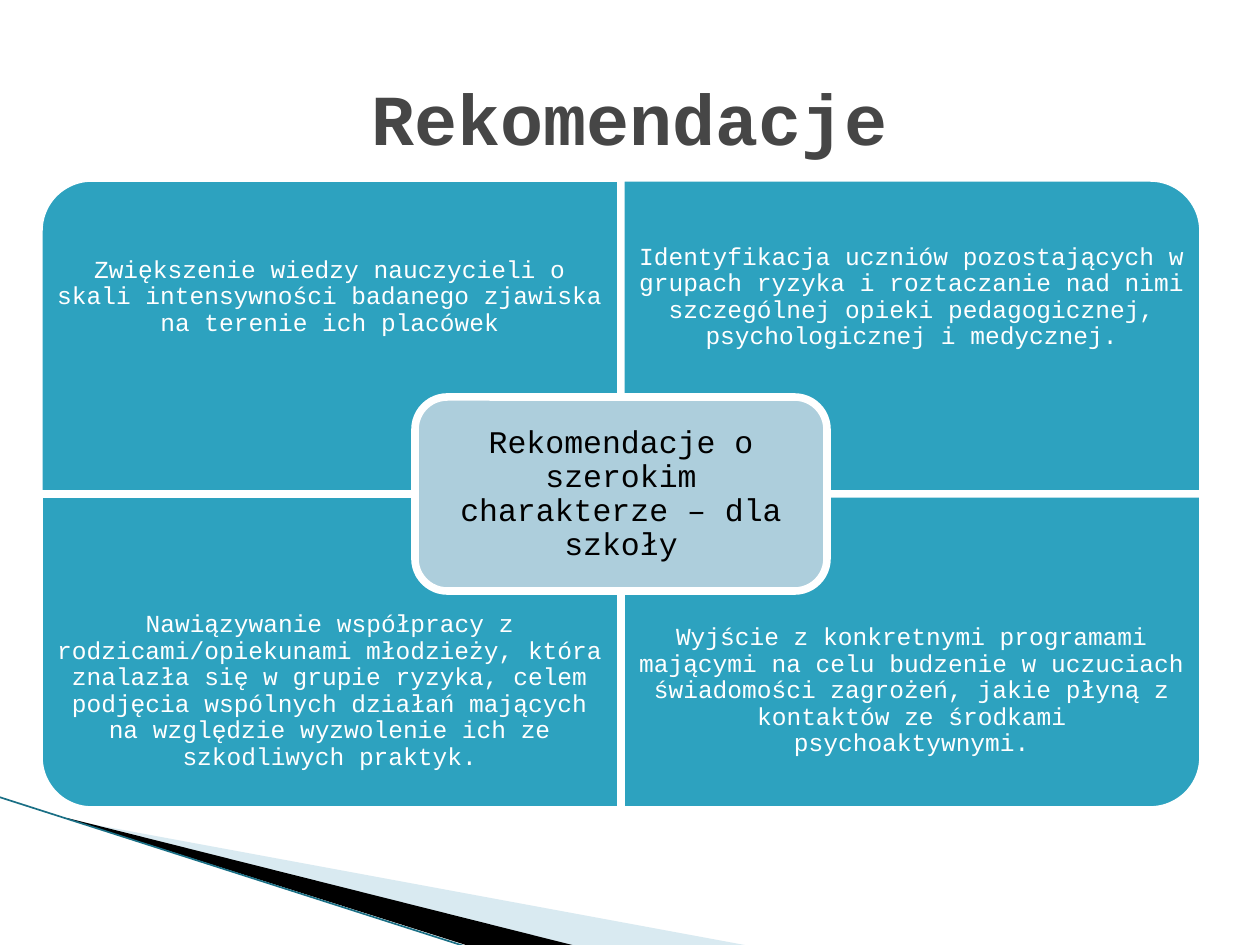
from lxml import etree
from pptx import Presentation
from pptx import util as u
from pptx.dml.color import RGBColor
from pptx.enum import shapes, text
from pptx.oxml.ns import qn

TITLE = "Rekomendacje"
CORE = "Rekomendacje o szerokim charakterze – dla szkoły"
# (column, row, rotation that turns the round corner outwards, text)
QUADRANTS = [
    (0, 0, 270, "Zwiększenie wiedzy nauczycieli o skali intensywności badanego "
                "zjawiska na terenie ich placówek"),
    (1, 0, 0, "Identyfikacja uczniów pozostających w grupach ryzyka i roztaczanie "
              "nad nimi szczególnej opieki pedagogicznej, psychologicznej i medycznej."),
    (0, 1, 180, "Nawiązywanie współpracy z rodzicami/opiekunami młodzieży, która "
                "znalazła się w grupie ryzyka, celem podjęcia wspólnych działań "
                "mających na względzie wyzwolenie ich ze szkodliwych praktyk."),
    (1, 1, 90, "Wyjście z konkretnymi programami mającymi na celu budzenie w "
               "uczuciach świadomości zagrożeń, jakie płyną z kontaktów ze "
               "środkami psychoaktywnymi."),
]
COLORS = {"quadrant": "2DA2BF", "core": "ADCEDC", "white": "FFFFFF", "black": "000000",
          "title": "464646", "pale": "A0CBDC", "edge": "1A6F85"}
WEDGES = [
    ("pale", 40, [(69, 820), (750, 946), (575, 946), (69, 819)]),
    ("black", 100, [(67, 818), (576, 946), (469, 946), (68, 819)]),
]
EDGE = (-1, 797, 467, 947)
FONT = "Courier New"
PX = 914400 // 126
LEFT, TOP, QUAD_W, QUAD_H = 39, 178, 582, 316
LABEL_H = 238
CORE_W, CORE_H = 412, 194


def emu(*lengths):
    return [u.Emu(length * PX) for length in lengths]


def rgb(name):
    return RGBColor.from_string(COLORS[name])


def write(frame, words, size, color, inset, bold=False):
    frame.word_wrap = True
    frame.vertical_anchor = text.MSO_ANCHOR.MIDDLE
    frame.margin_left = frame.margin_right = u.Emu(inset * PX)
    frame.margin_top = frame.margin_bottom = u.Emu(inset * PX)
    paragraph = frame.paragraphs[0]
    paragraph.alignment = text.PP_ALIGN.CENTER
    paragraph.line_spacing = 1.0 if bold else 0.9
    run = paragraph.add_run()
    run.text = words
    run.font.name, run.font.size, run.font.bold = FONT, u.Pt(size), bold
    run.font.color.rgb = rgb(color)


def add_tile(slide, preset, box, color):
    tile = slide.shapes.add_shape(preset, *emu(*box))
    tile.shadow.inherit = False
    tile.fill.solid()
    tile.fill.fore_color.rgb = rgb(color)
    tile.line.color.rgb = rgb("white")
    tile.line.width = u.Pt(4.33)
    return tile


def add_wedge(slide, color, opacity, points):
    builder = slide.shapes.build_freeform(*points[0], scale=PX)
    builder.add_line_segments(points[1:], close=True)
    wedge = builder.convert_to_shape()
    wedge.shadow.inherit = False
    wedge.fill.solid()
    wedge.fill.fore_color.rgb = rgb(color)
    wedge.line.fill.background()
    if opacity < 100:
        fill = next(wedge._element.spPr.iter(qn("a:srgbClr")))
        etree.SubElement(fill, qn("a:alpha"), val=str(opacity * 1000))


def add_quadrant(slide, column, row, rotation, words):
    x, y = LEFT + column * QUAD_W, TOP + row * QUAD_H
    w, h = QUAD_W, QUAD_H
    if rotation % 180:
        w, h = h, w
    box = (x + (QUAD_W - w) // 2, y + (QUAD_H - h) // 2, w, h)
    tile = add_tile(slide, shapes.MSO_SHAPE.ROUND_1_RECTANGLE, box, "quadrant")
    tile.rotation = rotation
    label_y = y + row * (QUAD_H - LABEL_H)
    label = slide.shapes.add_textbox(*emu(x, label_y, QUAD_W, LABEL_H))
    write(label.text_frame, words, 14, "white", 14)


def main():
    deck = Presentation()
    deck.slide_width, deck.slide_height = u.Inches(10), u.Inches(7.5)
    slide = deck.slides.add_slide(deck.slide_layouts[5])

    title = slide.shapes.title
    title.left, title.top, title.width, title.height = emu(63, 38, 1134, 158)
    write(title.text_frame, TITLE, 41, "title", 6, bold=True)

    for wedge in WEDGES:
        add_wedge(slide, *wedge)
    edge = slide.shapes.add_connector(shapes.MSO_CONNECTOR.STRAIGHT, *emu(*EDGE))
    edge.line.color.rgb = rgb("edge")
    edge.line.width = u.Pt(0.95)
    etree.SubElement(edge._element.spPr, qn("a:effectLst"))

    for quadrant in QUADRANTS:
        add_quadrant(slide, *quadrant)

    core_box = (LEFT + QUAD_W - CORE_W // 2, TOP + QUAD_H - CORE_H // 2, CORE_W, CORE_H)
    core = add_tile(slide, shapes.MSO_SHAPE.ROUNDED_RECTANGLE, core_box, "core")
    write(core.text_frame, CORE, 18, "black", 9)

    deck.save("out.pptx")


if __name__ == "__main__":
    main()
